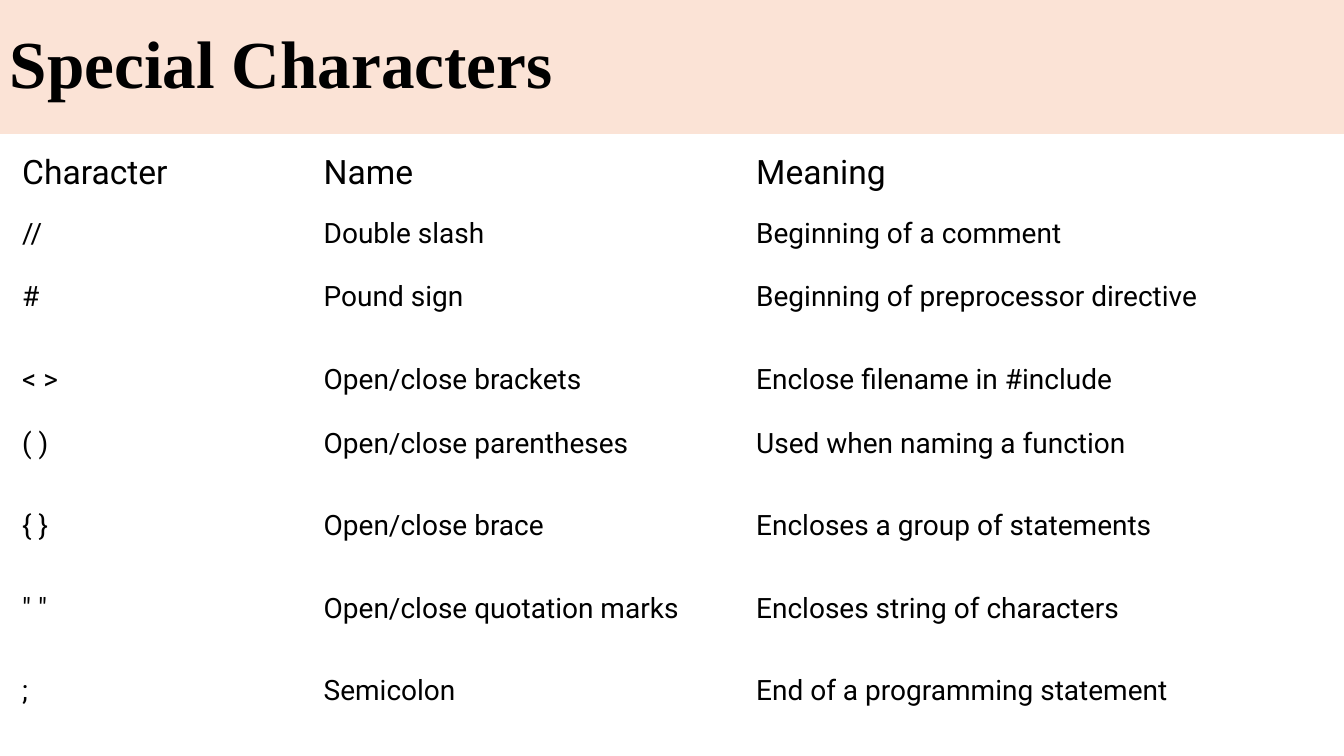
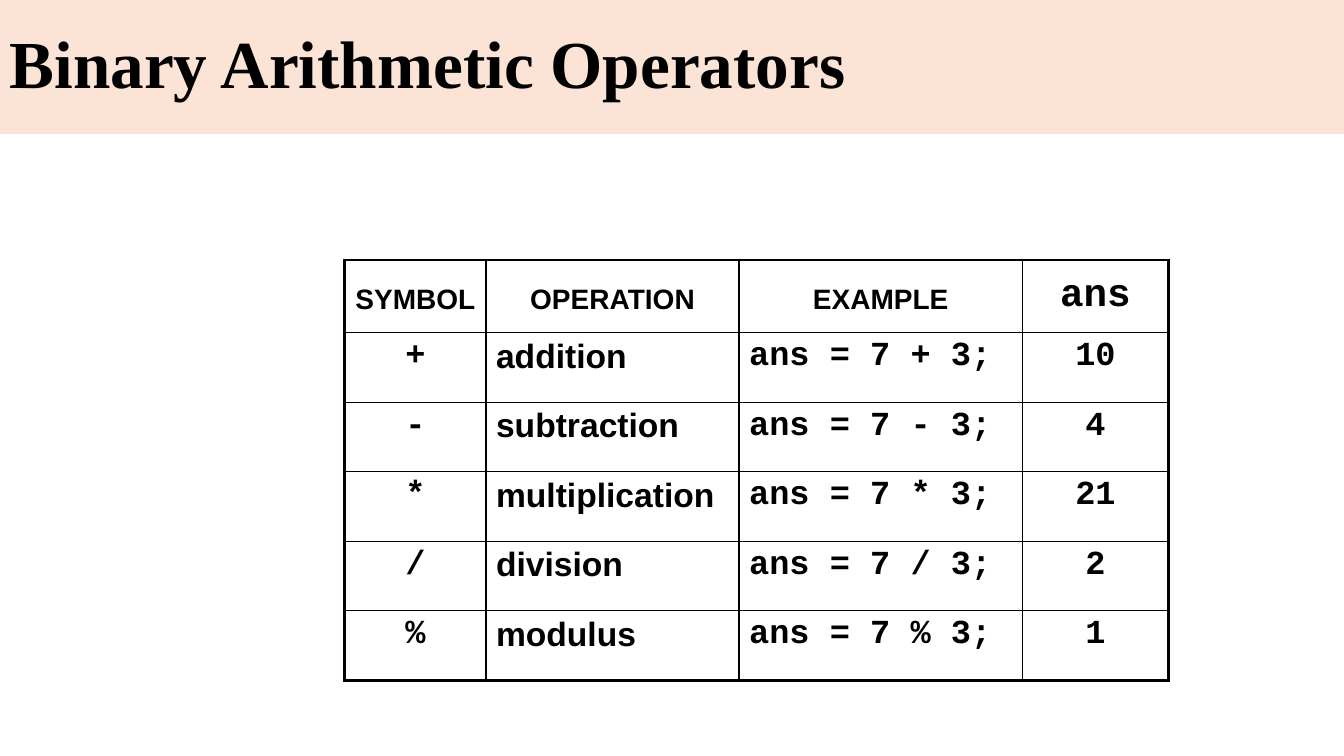
from dataclasses import dataclass

import pptx
import pptx.dml.color
import pptx.enum.shapes
import pptx.enum.text
import pptx.oxml.ns
import pptx.util
from lxml import etree
from pptx.util import Inches

COLORS = {"band": "FBE3D6", "ink": "000000", "paper": "FFFFFF"}
SLIDE_WIDTH, SLIDE_HEIGHT = 13.33, 7.5
BAND_HEIGHT = 1.33
THIN, THICK = 1, 2.25
LEFT, CENTER = pptx.enum.text.PP_ALIGN.LEFT, pptx.enum.text.PP_ALIGN.CENTER


@dataclass(frozen=True)
class TextStyle:
    font: str
    size: float
    bold: bool = False
    align: pptx.enum.text.PP_ALIGN = LEFT
    line_spacing: float = 1.0


@dataclass(frozen=True)
class Grid:
    left: float
    top: float
    columns: list[float]
    rows: list[float]
    header_styles: list[TextStyle]
    body_styles: list[TextStyle]
    ruled: bool = False


# Content
CHARACTERS = [
    ("Character", "Name", "Meaning"),
    ("//", "Double slash", "Beginning of a comment"),
    ("#", "Pound sign", "Beginning of preprocessor directive"),
    ("< >", "Open/close brackets", "Enclose filename in #include"),
    ("( )", "Open/close parentheses", "Used when naming a function"),
    ("{ }", "Open/close brace", "Encloses a group of statements"),
    ('" "', "Open/close quotation marks", "Encloses string of characters"),
    (";", "Semicolon", "End of a programming statement"),
]
OPERATIONS = [
    ("+", "addition", "10"),
    ("-", "subtraction", "4"),
    ("*", "multiplication", "21"),
    ("/", "division", "2"),
    ("%", "modulus", "1"),
]
OPERATORS = [("SYMBOL", "OPERATION", "EXAMPLE", "ans")] + [
    (symbol, operation, f"ans = 7 {symbol} 3;", answer)
    for symbol, operation, answer in OPERATIONS
]

# Text styles and table layouts
TITLE = TextStyle("Times New Roman", 48, bold=True, line_spacing=0.9)
HEADING = TextStyle("Arial", 20, True, CENTER, 1.6)
ANSWER_HEADING = TextStyle("Courier New", 28, True, CENTER, 1.2)
WORD = TextStyle("Arial", 24, True)
CODE = TextStyle("Courier New", 24, True)
CENTERED_CODE = TextStyle("Courier New", 24, True, CENTER)

CHARACTER_GRID = Grid(
    left=0.12, top=1.5,
    columns=[2.99, 4.29, 5.85],
    rows=[0.63, 0.63, 0.82, 0.63] + [0.82] * 4,
    header_styles=[TextStyle("Roboto", 24, line_spacing=0.9)] * 3,
    body_styles=[TextStyle("Roboto", 20, line_spacing=0.9)] * 3,
)
OPERATOR_GRID = Grid(
    left=3.42, top=2.58,
    columns=[1.4, 2.51, 2.81, 1.45],
    rows=[0.72] + [0.69] * len(OPERATIONS),
    header_styles=[HEADING] * 3 + [ANSWER_HEADING],
    body_styles=[CENTERED_CODE, WORD, CODE, CENTERED_CODE],
    ruled=True,
)


def rgb(name: str) -> pptx.dml.color.RGBColor:
    return pptx.dml.color.RGBColor.from_string(COLORS[name])


def write(frame, text: str, *, style: TextStyle, color: str = "ink") -> None:
    """Put one formatted paragraph in a text frame."""
    frame.word_wrap = True
    paragraph = frame.paragraphs[0]
    paragraph.alignment = style.align
    paragraph.line_spacing = style.line_spacing
    run = paragraph.add_run()
    run.text = text
    run.font.name = style.font
    run.font.size = pptx.util.Pt(style.size)
    run.font.bold = style.bold
    run.font.color.rgb = rgb(color)


def add_border(cell, side: str, width: float) -> None:
    """Draw one cell edge; side is L, R, T or B."""
    qn = pptx.oxml.ns.qn
    properties = cell._tc.get_or_add_tcPr()
    line = etree.SubElement(properties, qn(f"a:ln{side}"), w=str(pptx.util.Pt(width)))
    fill = etree.SubElement(line, qn("a:solidFill"))
    etree.SubElement(fill, qn("a:srgbClr"), val=COLORS["ink"])


def add_grid(slide, grid: Grid, entries: list[tuple[str, ...]]) -> None:
    """Add a table, with a heavy frame and thin inner rules if it is ruled."""
    table = slide.shapes.add_table(
        len(grid.rows), len(grid.columns), Inches(grid.left), Inches(grid.top),
        Inches(sum(grid.columns)), Inches(sum(grid.rows)),
    ).table
    table.first_row = table.horz_banding = False
    for column, width in zip(table.columns, grid.columns):
        column.width = Inches(width)
    for row, height in zip(table.rows, grid.rows):
        row.height = Inches(height)

    last_row, last_column = len(grid.rows) - 1, len(grid.columns) - 1
    for r, entry in enumerate(entries):
        styles = grid.body_styles if r else grid.header_styles
        for c, (text, style) in enumerate(zip(entry, styles)):
            cell = table.cell(r, c)
            write(cell.text_frame, text, style=style)
            if not grid.ruled:
                cell.fill.background()
                continue
            outer = {"L": c == 0, "R": c == last_column, "T": r == 0, "B": r == last_row}
            for side, is_outer in outer.items():
                add_border(cell, side, THICK if is_outer else THIN)
            cell.fill.solid()
            cell.fill.fore_color.rgb = rgb("paper")


def add_titled_slide(deck, title: str):
    """Add a blank slide with the title band across its top."""
    slide = deck.slides.add_slide(deck.slide_layouts[6])
    band = slide.shapes.add_shape(
        pptx.enum.shapes.MSO_SHAPE.RECTANGLE,
        0, 0, Inches(SLIDE_WIDTH), Inches(BAND_HEIGHT),
    )
    band.shadow.inherit = False
    band.fill.solid()
    band.fill.fore_color.rgb = rgb("band")
    band.line.fill.background()
    band.text_frame.vertical_anchor = pptx.enum.text.MSO_ANCHOR.MIDDLE
    write(band.text_frame, title, style=TITLE)
    return slide


def main() -> None:
    deck = pptx.Presentation()
    deck.slide_width = Inches(SLIDE_WIDTH)
    deck.slide_height = Inches(SLIDE_HEIGHT)
    for title, grid, entries in [
        ("Special Characters", CHARACTER_GRID, CHARACTERS),
        ("Binary Arithmetic Operators", OPERATOR_GRID, OPERATORS),
    ]:
        add_grid(add_titled_slide(deck, title), grid, entries)
    deck.save("out.pptx")


if __name__ == "__main__":
    main()
